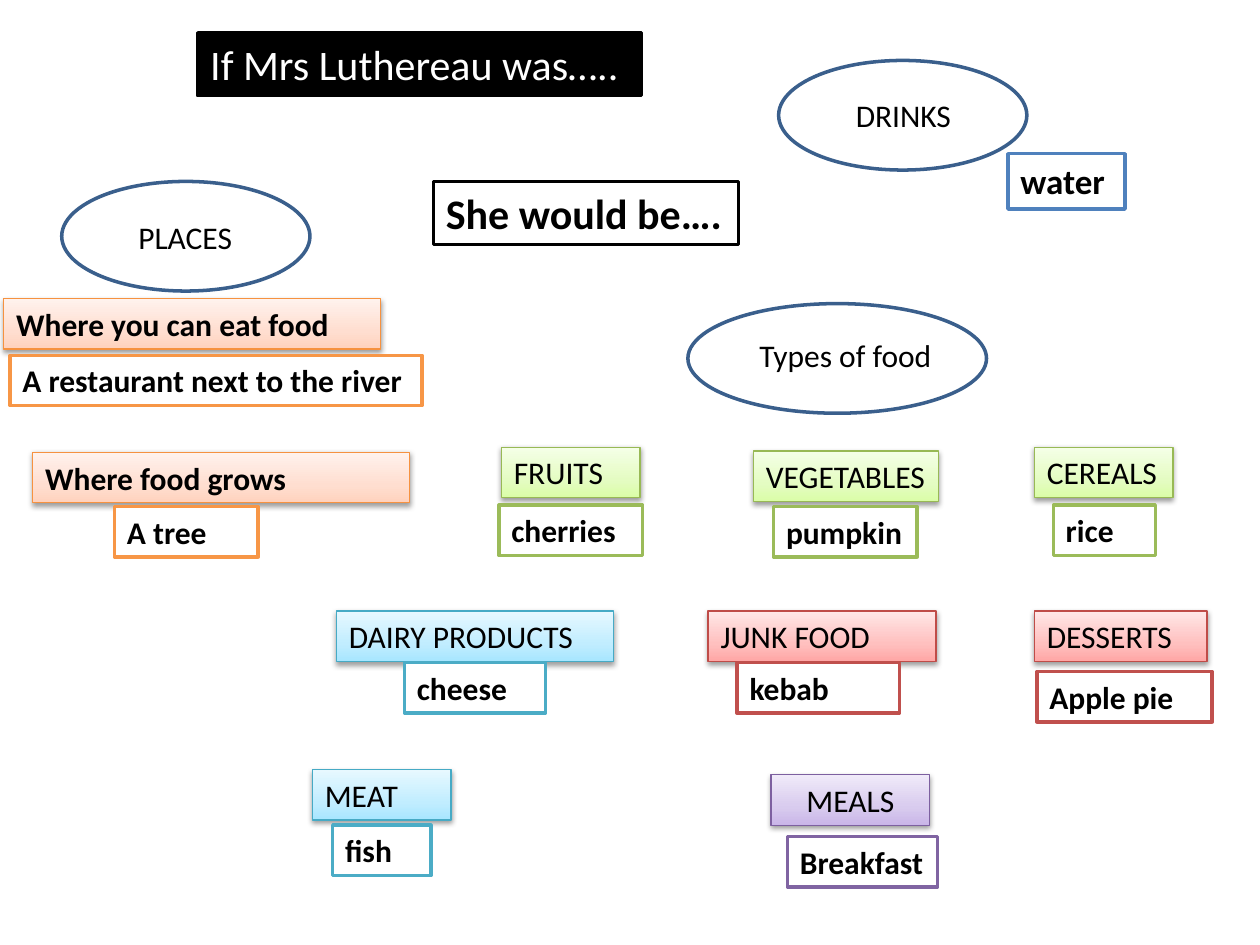
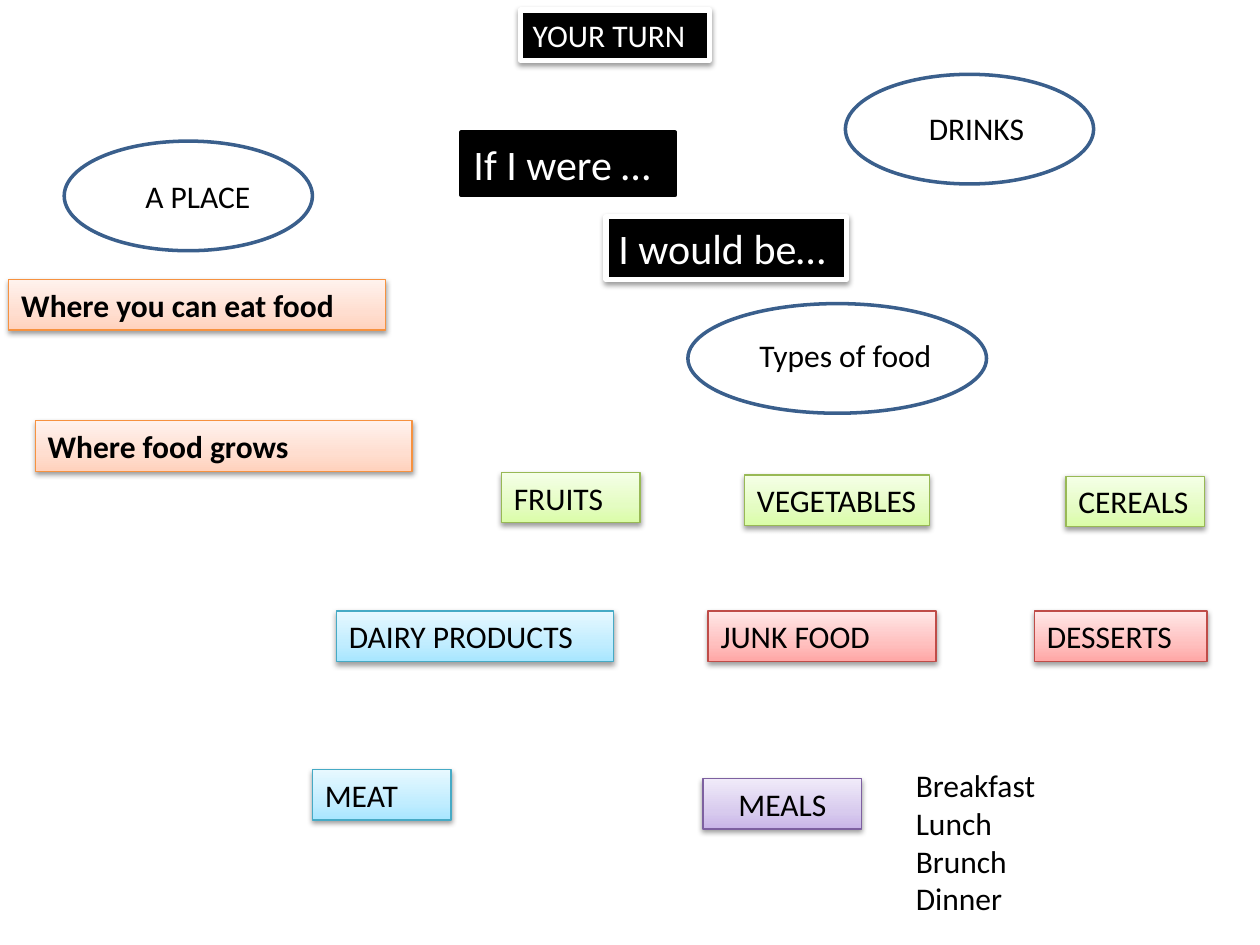
import copy
from dataclasses import dataclass, field
from typing import Optional

import pptx
import pptx.dml.color
import pptx.enum.shapes
import pptx.enum.text
import pptx.oxml.ns
import pptx.util
from lxml import etree

Inches = pptx.util.Inches
Pt = pptx.util.Pt
qn = pptx.oxml.ns.qn
CENTER = pptx.enum.text.PP_ALIGN.CENTER
LEFT = pptx.enum.text.PP_ALIGN.LEFT
SHAPE = pptx.enum.shapes.MSO_SHAPE


@dataclass(frozen=True)
class Accent:
    gradient: tuple[str, str, str]
    edge: str
    border: str


@dataclass(frozen=True)
class Theme:
    font: str = "Calibri"
    black: str = "000000"
    white: str = "FFFFFF"
    ring: str = "3A5F8C"
    drink: str = "4F81BD"
    orange: Accent = Accent(("FFD2BD", "FFDED0", "FFF2ED"), "F69240", "F79646")
    green: Accent = Accent(("DAFDA7", "E4FCC2", "F5FFE7"), "98B955", "9BBB59")
    blue: Accent = Accent(("A7E6FF", "C1EDFF", "E7F8FF"), "46AAC5", "4BACC6")
    red: Accent = Accent(("FFA6A5", "FFC0BF", "FFE7E7"), "BF4C48", "C0504D")
    purple: Accent = Accent(("C9B5E8", "D8CBEE", "F0EAF9"), "7D60A0", "8064A2")
    stops: tuple[float, float, float] = (0, 0.35, 1)
    body: int = 18
    drink_size: int = 20
    heading: int = 24
    heights: dict[int, float] = field(
        default_factory=lambda: {18: 0.4, 20: 0.44, 24: 0.5})
    thin: float = 0.75
    medium: float = 2
    thick: float = 3


THEME = Theme()


@dataclass(frozen=True)
class Style:
    fill: tuple[str, ...]
    line: str
    weight: float
    color: str = THEME.black
    size: int = THEME.body
    bold: bool = False
    shadow: bool = False


@dataclass(frozen=True)
class Box:
    text: str
    left: float
    top: float
    width: float
    style: Style
    align: int = LEFT
    wrap: bool = True


@dataclass(frozen=True)
class Topic:
    text: str
    left: float
    top: float
    text_left: float
    text_top: float
    width: float = 1.97
    text_width: float = 1.34
    height: float = 0.87


def category(accent: Accent, bold: bool = False) -> Style:
    return Style(accent.gradient, accent.edge, THEME.thin, bold=bold, shadow=True)


def answer(border: str, size: int = THEME.body) -> Style:
    return Style((THEME.white,), border, THEME.medium, size=size, bold=True)


def framed(size: int) -> Style:
    return Style((THEME.black,), THEME.white, THEME.thick, THEME.white, size, shadow=True)


PLACE = category(THEME.orange, bold=True)
PLANT = category(THEME.green)
ANIMAL = category(THEME.blue)
TREAT = category(THEME.red)
MEAL = category(THEME.purple)
BANNER = Style((THEME.black,), THEME.black, THEME.medium, THEME.white, THEME.heading)

FOOD_TOPIC = Topic("Types of food", 5.46, 2.41, 5.59, 2.62, 2.37, 2.24)
SHARED_BOXES = (
    Box("DAIRY PRODUCTS", 2.67, 4.85, 2.2, ANIMAL),
    Box("MEAT", 2.48, 6.11, 1.1, ANIMAL),
    Box("JUNK FOOD", 5.62, 4.85, 1.81, TREAT),
    Box("DESSERTS", 8.21, 4.85, 1.37, TREAT),
)

EXAMPLE_TOPICS = (
    Topic("PLACES", 0.49, 1.44, 0.8, 1.68),
    Topic("DRINKS", 6.18, 0.48, 6.5, 0.71),
)
EXAMPLE_BOXES = (
    Box("Where you can eat food", 0.03, 2.37, 2.99, PLACE),
    Box("Where food grows", 0.26, 3.59, 2.99, PLACE),
    Box("FRUITS", 3.98, 3.55, 1.1, PLANT),
    Box("VEGETABLES", 5.98, 3.58, 1.47, PLANT),
    Box("CEREALS", 8.21, 3.55, 1.1, PLANT),
    Box("MEALS", 6.12, 6.15, 1.26, MEAL, CENTER),
    Box("water", 8, 1.22, 0.93, answer(THEME.drink, THEME.drink_size)),
    Box("A restaurant next to the river", 0.08, 2.82, 3.27, answer(THEME.orange.border)),
    Box("A tree", 0.91, 4.02, 1.14, answer(THEME.orange.border)),
    Box("cherries", 3.96, 4.01, 1.14, answer(THEME.green.border)),
    Box("pumpkin", 6.14, 4.02, 1.14, answer(THEME.green.border)),
    Box("rice", 8.36, 4.01, 0.81, answer(THEME.green.border)),
    Box("cheese", 3.21, 5.26, 1.12, answer(THEME.blue.border)),
    Box("fish", 2.64, 6.55, 0.78, answer(THEME.blue.border)),
    Box("kebab", 5.85, 5.26, 1.29, answer(THEME.red.border)),
    Box("Apple pie", 8.23, 5.33, 1.39, answer(THEME.red.border)),
    Box("Breakfast", 6.25, 6.64, 1.19, answer(THEME.purple.border), wrap=False),
    Box("If Mrs Luthereau was…..", 1.57, 0.26, 3.52, BANNER),
    Box("She would be….", 3.44, 1.44, 2.42, answer(THEME.black, THEME.heading), wrap=False),
)

TURN_TOPICS = (
    Topic("A PLACE", 0.51, 1.12, 0.9, 1.36),
    Topic("DRINKS", 6.71, 0.59, 7.08, 0.82),
)
TURN_BOXES = (
    Box("Where you can eat food", 0.07, 2.22, 2.99, PLACE),
    Box("Where food grows", 0.28, 3.34, 2.99, PLACE),
    Box("FRUITS", 3.98, 3.75, 1.1, PLANT),
    Box("VEGETABLES", 5.91, 3.77, 1.47, PLANT),
    Box("CEREALS", 8.46, 3.78, 1.1, PLANT),
    Box("MEALS", 5.58, 6.18, 1.26, MEAL, CENTER),
    Box("YOUR TURN", 4.13, 0.08, 1.5, framed(THEME.body)),
    Box("I would be…", 4.81, 1.72, 1.91, framed(THEME.heading)),
    Box("If I were …", 3.66, 1.05, 1.7, BANNER, wrap=False),
)
MEAL_NAMES = "Breakfast\nLunch\nBrunch\nDinner"


def rgb(value: str) -> pptx.dml.color.RGBColor:
    return pptx.dml.color.RGBColor.from_string(value)


def write(sp, text: str, size: int = THEME.body, color: str = THEME.black,
          bold: bool = False, align: int = LEFT, wrap: bool = True) -> None:
    tf = sp.text_frame
    tf.text = text
    tf.word_wrap = wrap
    tf.auto_size = pptx.enum.text.MSO_AUTO_SIZE.SHAPE_TO_FIT_TEXT
    tf.vertical_anchor = pptx.enum.text.MSO_ANCHOR.TOP
    for p in tf.paragraphs:
        p.alignment = align
        for r in p.runs:
            r.font.name = THEME.font
            r.font.size = Pt(size)
            r.font.bold = bold
            r.font.color.rgb = rgb(color)


def paint(sp, colors: tuple[str, ...]) -> None:
    if len(colors) == 1:
        sp.fill.solid()
        sp.fill.fore_color.rgb = rgb(colors[0])
        return
    sp.fill.gradient()
    sp.fill.gradient_angle = 90
    stop_list = sp.element.spPr.find(".//" + qn("a:gsLst"))
    stop_list.append(copy.deepcopy(stop_list[0]))
    for stop, position, color in zip(sp.fill.gradient_stops, THEME.stops, colors):
        stop.position = position
        stop.color.rgb = rgb(color)


def cast_shadow(sp) -> None:
    effects = sp.element.spPr.find(qn("a:effectLst"))
    shadow = etree.SubElement(effects, qn("a:outerShdw"), blurRad=str(Pt(3.1)),
                              dist=str(Pt(1.6)), dir="5400000", rotWithShape="0")
    color = etree.SubElement(shadow, qn("a:srgbClr"), val=THEME.black)
    etree.SubElement(color, qn("a:alpha"), val="38000")


def add_outlined(s, kind: int, left: float, top: float, width: float, height: float,
                 line: str, weight: float):
    sp = s.shapes.add_shape(kind, Inches(left), Inches(top), Inches(width), Inches(height))
    sp.shadow.inherit = False
    sp.line.color.rgb = rgb(line)
    sp.line.width = Pt(weight)
    return sp


def add_box(s, box: Box) -> None:
    style = box.style
    sp = add_outlined(s, SHAPE.RECTANGLE, box.left, box.top, box.width,
                      THEME.heights[style.size], style.line, style.weight)
    paint(sp, style.fill)
    if style.shadow:
        cast_shadow(sp)
    write(sp, box.text, style.size, style.color, style.bold, box.align, box.wrap)


def add_text(s, text: str, left: float, top: float, width: float, height: float,
             align: int = LEFT) -> None:
    sp = s.shapes.add_textbox(Inches(left), Inches(top), Inches(width), Inches(height))
    write(sp, text, align=align)


def add_topic(s, topic: Topic) -> None:
    sp = add_outlined(s, SHAPE.OVAL, topic.left, topic.top, topic.width, topic.height,
                      THEME.ring, THEME.medium)
    sp.fill.background()
    add_text(s, topic.text, topic.text_left, topic.text_top, topic.text_width,
             THEME.heights[THEME.body], CENTER)


def add_map(prs, topics: tuple[Topic, ...], boxes: tuple[Box, ...],
            meal_names: Optional[str] = None) -> None:
    s = prs.slides.add_slide(prs.slide_layouts[6])
    for topic in (*topics, FOOD_TOPIC):
        add_topic(s, topic)
    for box in (*SHARED_BOXES, *boxes):
        add_box(s, box)
    if meal_names:
        add_text(s, meal_names, 7.17, 6.03, 1.73, 1.31)


def main() -> None:
    prs = pptx.Presentation()
    prs.slide_width = Inches(10)
    prs.slide_height = Inches(7.5)
    add_map(prs, EXAMPLE_TOPICS, EXAMPLE_BOXES)
    add_map(prs, TURN_TOPICS, TURN_BOXES, MEAL_NAMES)
    prs.save("out.pptx")


if __name__ == "__main__":
    main()
